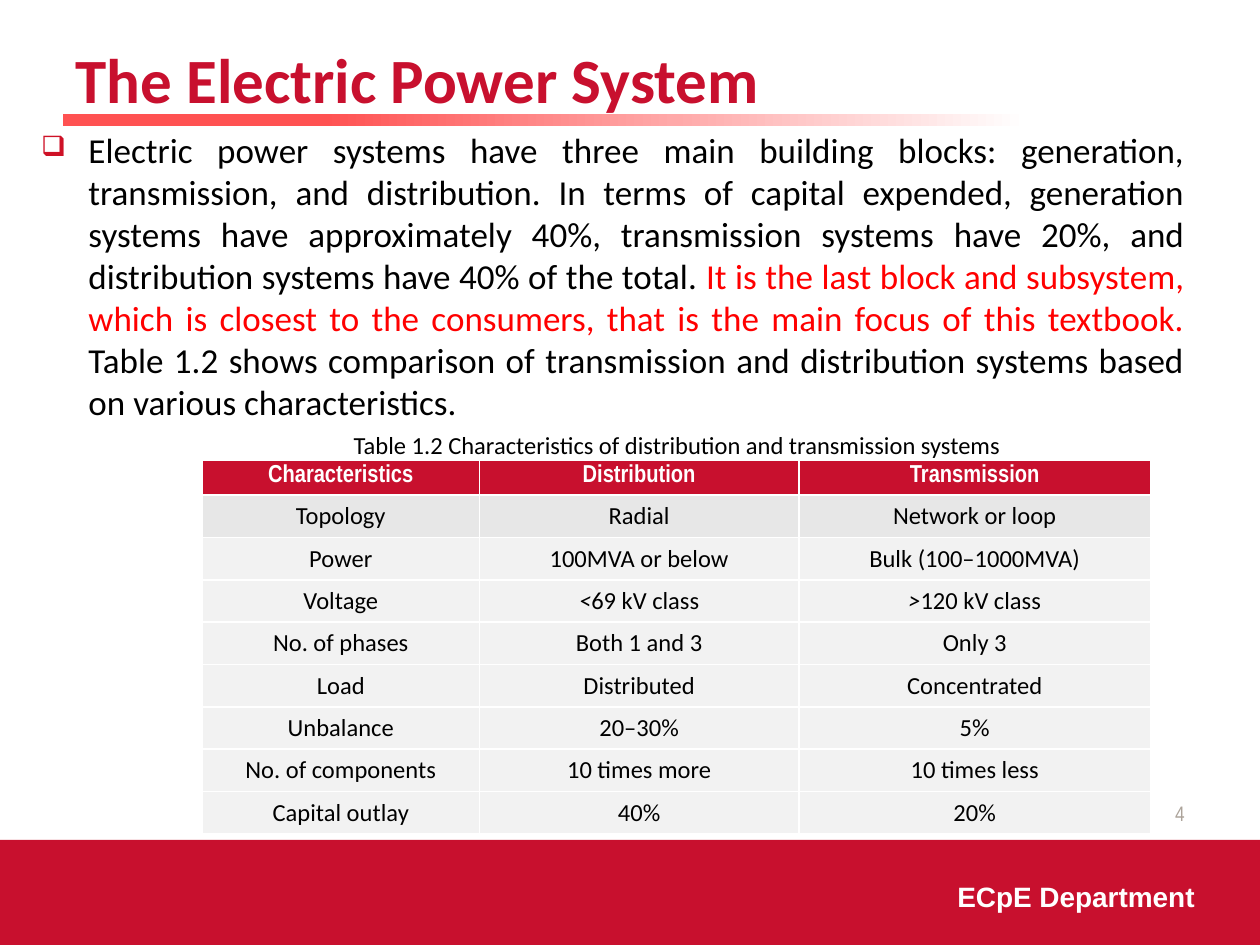
import pptx
import pptx.util
import pptx.dml.color
import pptx.enum.shapes
import pptx.enum.text
import pptx.oxml.ns
from lxml import etree

Pt = pptx.util.Pt
qn = pptx.oxml.ns.qn
ALIGN = pptx.enum.text.PP_ALIGN
ANCHOR = pptx.enum.text.MSO_ANCHOR

RED, BLACK, WHITE = "C8102E", "000000", "FFFFFF"


def rgb(value):
    return pptx.dml.color.RGBColor.from_string(value)


def add_xml(parent, tag, **attrs):
    return etree.SubElement(parent, qn(tag), attrs)


class SlideBuilder:
    font = "Calibri"

    def __init__(self, slide):
        self.slide = slide

    def style(self, p, size, color=None, bold=False, font=None, align=ALIGN.LEFT):
        p.alignment = align
        p.font.name = font or self.font
        p.font.size = Pt(size)
        p.font.bold = bold
        if color:
            p.font.color.rgb = rgb(color)

    def title(self, text, box, size, color):
        sp = self.slide.shapes.title
        sp.left, sp.top, sp.width, sp.height = map(Pt, box)
        tf = sp.text_frame
        tf.text = text
        tf.vertical_anchor = ANCHOR.MIDDLE
        self.style(tf.paragraphs[0], size, color, bold=True)

    def bar(self, box, color=None, stops=None):
        sp = self.slide.shapes.add_shape(
            pptx.enum.shapes.MSO_SHAPE.RECTANGLE, *map(Pt, box))
        sp.shadow.inherit = False
        sp.line.fill.background()
        if color:
            sp.fill.solid()
            sp.fill.fore_color.rgb = rgb(color)
        else:
            sp.fill.gradient()
            sp.fill.gradient_angle = 0
            gs_list = sp.element.spPr.find(".//" + qn("a:gsLst"))
            for gs in list(gs_list):
                gs_list.remove(gs)
            for percent, stop in stops:
                gs = add_xml(gs_list, "a:gs", pos=str(percent * 1000))
                add_xml(gs, "a:srgbClr", val=stop)

    def text_box(self, box, anchor=ANCHOR.TOP):
        tf = self.slide.shapes.add_textbox(*map(Pt, box)).text_frame
        tf.word_wrap = True
        tf.vertical_anchor = anchor
        return tf

    def label(self, text, box, size, color, anchor=ANCHOR.TOP, **style):
        p = self.text_box(box, anchor).paragraphs[0]
        p.add_run().text = text
        self.style(p, size, color, **style)

    def bullet(self, runs, box, size, char, char_color, indent):
        p = self.text_box(box).paragraphs[0]
        p.space_after = Pt(6)
        pPr = p._p.get_or_add_pPr()
        pPr.set("marL", str(Pt(indent)))
        pPr.set("indent", str(-Pt(indent)))
        add_xml(add_xml(pPr, "a:buClr"), "a:srgbClr", val=char_color)
        add_xml(pPr, "a:buSzPct", val="80000")
        add_xml(pPr, "a:buChar", char=char)
        for text, color in runs:
            r = p.add_run()
            r.text = text
            r.font.color.rgb = rgb(color)
        self.style(p, size, align=ALIGN.JUSTIFY)

    def cell(self, cell, text, fill, color, **style):
        tcPr = cell._tc.get_or_add_tcPr()
        for side in ("a:lnL", "a:lnR", "a:lnT", "a:lnB"):
            ln = add_xml(tcPr, side, w=str(Pt(1.08)))
            add_xml(add_xml(ln, "a:solidFill"), "a:srgbClr", val=WHITE)
        cell.fill.solid()
        cell.fill.fore_color.rgb = rgb(fill)
        cell.vertical_anchor = ANCHOR.MIDDLE
        p = cell.text_frame.paragraphs[0]
        # A leading comparison sign is set in italics
        sign = text[:1] if text[0] in "<>" else ""
        if sign:
            r = p.add_run()
            r.text = sign
            r.font.italic = True
        p.add_run().text = text[len(sign):]
        self.style(p, 14, color, align=ALIGN.CENTER, **style)

    def table(self, rows, left, top, widths, head_height, row_height):
        height = head_height + row_height * (len(rows) - 1)
        table = self.slide.shapes.add_table(
            len(rows), len(widths), Pt(left), Pt(top),
            Pt(sum(widths)), Pt(height)).table
        for column, width in zip(table.columns, widths):
            column.width = Pt(width)
        for i, row in enumerate(rows):
            table.rows[i].height = Pt(row_height if i else head_height)
            for j, text in enumerate(row):
                cell = table.cell(i, j)
                if i == 0:
                    cell.margin_top, cell.margin_bottom = Pt(0), Pt(2)
                    self.cell(cell, text, RED, WHITE, bold=True, font="Arial Narrow")
                else:
                    self.cell(cell, text, "E7E7E7" if i == 1 else "F2F2F2", BLACK)


prs = pptx.Presentation()
prs.slide_width, prs.slide_height = Pt(720), Pt(540)
page = SlideBuilder(prs.slides.add_slide(prs.slide_layouts[5]))

# Footer band and title rule
page.bar((0, 480, 720, 60), RED)
page.bar((36, 65, 648, 7), stops=[(23, "FF5252"), (54, "FFA9A9"), (85, WHITE)])

# Title and body
page.title("The Electric Power System", (36, 12, 667, 66), 36, RED)
page.bullet([
    ("Electric power systems have three main building blocks: generation, "
     "transmission, and distribution. In terms of capital expended, generation "
     "systems have approximately 40%, transmission systems have 20%, and "
     "distribution systems have 40% of the total. ", BLACK),
    ("It is the last block and subsystem, which is closest to the consumers, "
     "that is the main focus of this textbook. ", "FF0000"),
    ("Table 1.2 shows comparison of transmission and distribution systems "
     "based on various characteristics.", BLACK),
], (16.5, 70, 667.5, 181), 20, "❑", "CE1126", 27)

# Slide number and department
page.label("4", (516, 450, 168, 29), 12, "ACA39A", ANCHOR.MIDDLE,
           font="Arial Narrow", align=ALIGN.RIGHT)
page.label("ECpE Department", (540, 499, 174, 30), 16, WHITE, bold=True, font="Arial")

# Table and caption
page.table([
    ("Characteristics", "Distribution", "Transmission"),
    ("Topology", "Radial", "Network or loop"),
    ("Power", "100MVA or below", "Bulk (100–1000MVA)"),
    ("Voltage", "<69 kV class", ">120 kV class"),
    ("No. of phases", "Both 1 and 3", "Only 3"),
    ("Load", "Distributed", "Concentrated"),
    ("Unbalance", "20–30%", "5%"),
    ("No. of components", "10 times more", "10 times less"),
    ("Capital outlay", "40%", "20%"),
], 115.5, 263, (158.5, 182.5, 201), 20, 24.2)
page.label("Table 1.2 Characteristics of distribution and transmission systems",
           (181, 242, 412, 24.5), 14, BLACK, align=ALIGN.CENTER)

prs.save("out.pptx")
